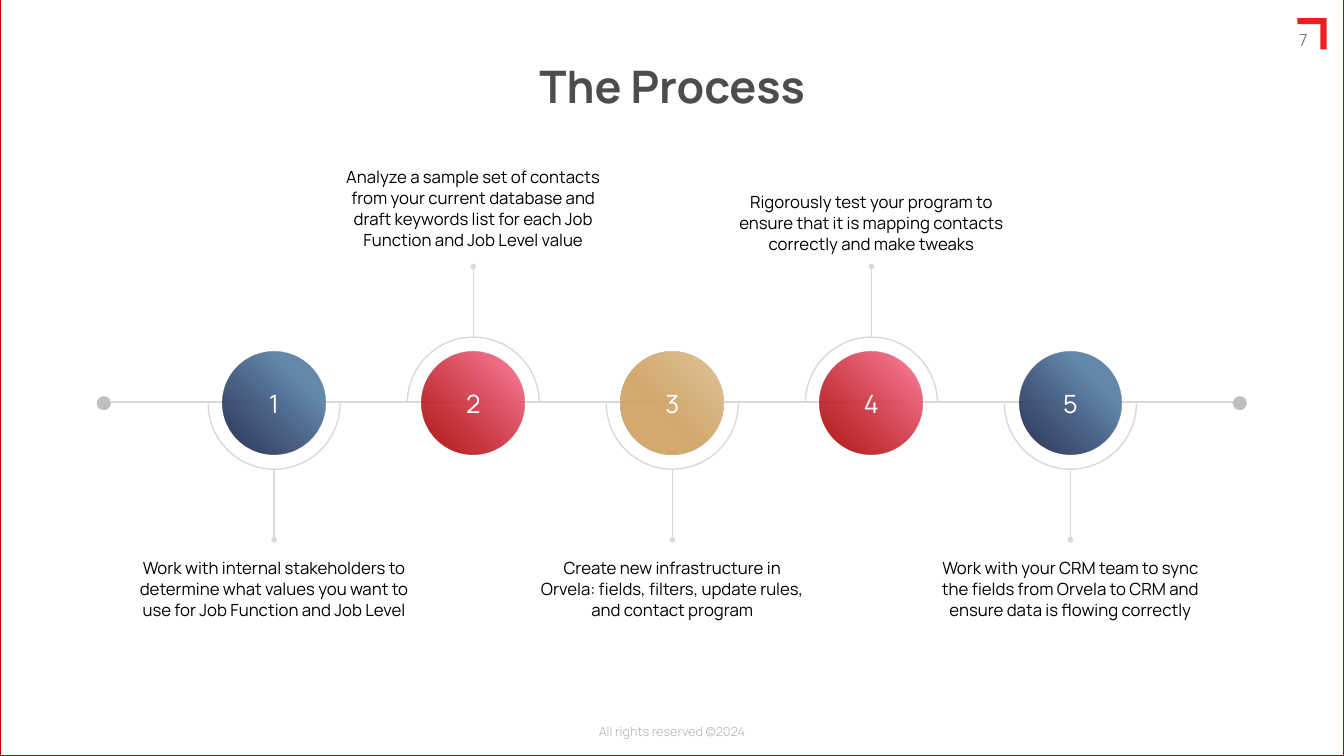
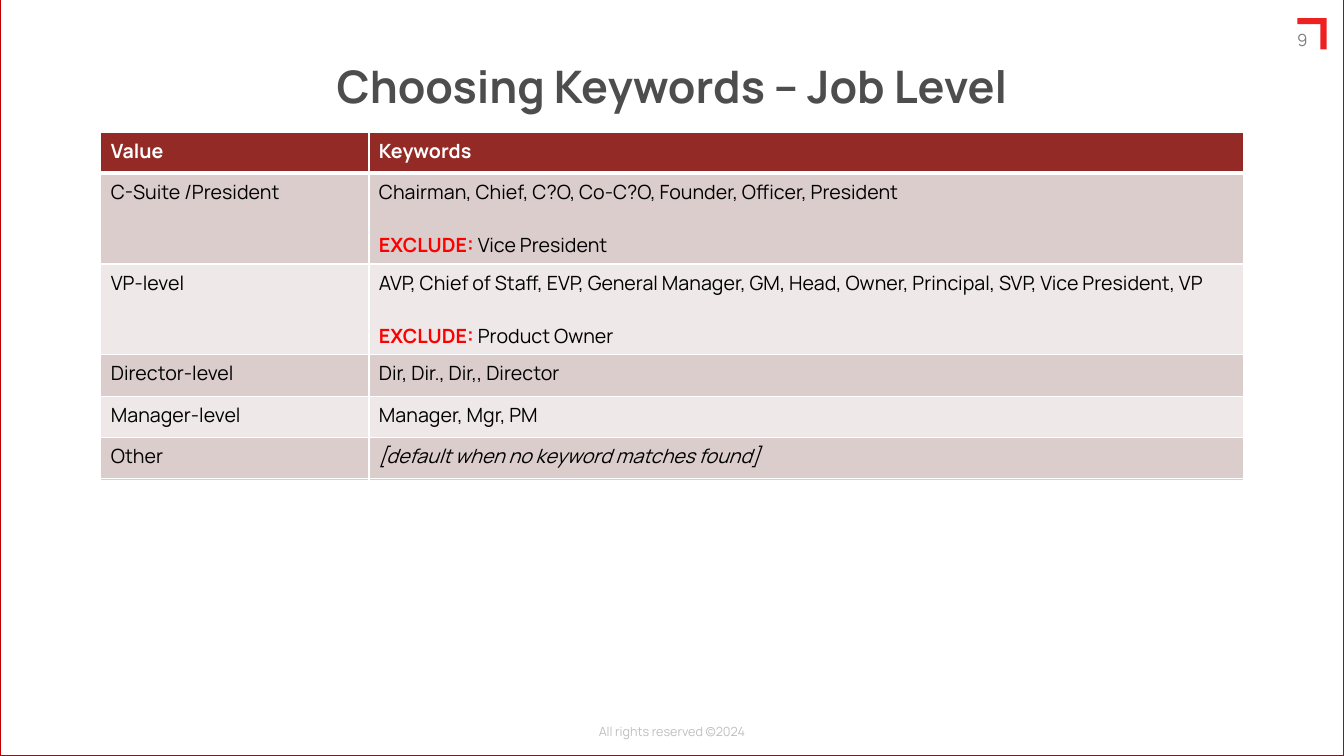
from dataclasses import dataclass
from typing import Any, NamedTuple

from lxml.etree import SubElement
from pptx import Presentation
from pptx.dml.color import RGBColor as RGB
from pptx.enum.shapes import MSO_CONNECTOR, MSO_SHAPE as SHAPE
from pptx.enum.text import MSO_ANCHOR as ANCHOR, PP_ALIGN as ALIGN
from pptx.oxml.ns import qn
from pptx.util import Inches, Pt

FONT = "Manrope"
WHITE = RGB(0xFF, 0xFF, 0xFF)
BLACK = RGB(0x00, 0x00, 0x00)
TITLE_GREY = RGB(0x4D, 0x4D, 0x4D)
NUMBER_GREY = RGB(0x80, 0x80, 0x80)
SOFT_GREY = RGB(0xBF, 0xBF, 0xBF)
LINE_GREY = RGB(0xD9, 0xD9, 0xD9)
CORNER_RED = RGB(0xED, 0x21, 0x22)
FRAME_RED = RGB(0xC0, 0x00, 0x00)
EXCLUDE_RED = RGB(0xFF, 0x00, 0x00)
HEADER_RED = RGB(0x93, 0x2A, 0x25)
ROW_FILLS = (RGB(0xDC, 0xCD, 0xCD), RGB(0xEE, 0xE8, 0xE8))

TITLE_FORMAT = {"size": Pt(32), "bold": True, "color": TITLE_GREY}
NUMBER_FORMAT = {"size": Pt(12), "color": NUMBER_GREY}
FOOTER_FORMAT = {"size": Pt(9), "color": SOFT_GREY}
STEP_FORMAT = {"size": Pt(18), "color": WHITE}
CAPTION_FORMAT = {"size": Pt(12), "color": BLACK}
HEADER_FORMAT = {"size": Pt(14), "bold": True, "color": WHITE}
CELL_FORMAT = {"size": Pt(14), "bold": False, "color": BLACK}
EXCLUDE_FORMAT = {"size": Pt(14), "bold": True, "color": EXCLUDE_RED}

SLIDE_WIDTH = 40 / 3
CORNER = ((12.87, 0.18), (13.16, 0.18), (13.16, 0.49),
          (13.1, 0.49), (13.1, 0.24), (12.87, 0.24))

AXIS_Y = 3.99
STEP_Y = 4
FIRST_STEP_X, LAST_STEP_X = 2.72, 10.62
AXIS_START, AXIS_END = 1.1, 12.23
END_DOT = 0.14
DISC = 1.02
ARC = 1.31
STEM = 0.7
CAPTION_WIDTH = 2.71


class Stop(NamedTuple):
    position: float
    color: RGB
    opacity: int


NAVY = (Stop(0.14, RGB(0x23, 0x2F, 0x57), 90), Stop(0.73, RGB(0x63, 0x89, 0xAD), 100))
CRIMSON = (Stop(0.11, RGB(0xAD, 0x00, 0x00), 86), Stop(0.99, RGB(0xFF, 0x83, 0xA4), 100))
SAND = (Stop(0.43, RGB(0xCF, 0xA1, 0x60), 90), Stop(1, RGB(0xE1, 0xC5, 0x9B), 100))


@dataclass(frozen=True)
class Step:
    caption: str
    gradient: tuple[Stop, Stop]
    caption_top: float
    caption_height: float = 0.62

    @property
    def points_up(self) -> bool:
        return self.caption_top < AXIS_Y


@dataclass(frozen=True)
class Level:
    name: str
    keywords: str
    excluded: str = ""
    italic: bool = False

    @property
    def row_height(self) -> float:
        return 0.9 if self.excluded else 0.41


STEPS = (
    Step("Work with internal stakeholders to determine what values you want to "
         "use for Job Function and Job Level", NAVY, 5.52),
    Step("Analyze a sample set of contacts from your current database and draft "
         "keywords list for each Job Function and Job Level value", CRIMSON, 1.65, 0.83),
    Step("Create new infrastructure in Orvela: fields, filters, update rules, "
         "and contact program", SAND, 5.52),
    Step("Rigorously test your program to ensure that it is mapping contacts "
         "correctly and make tweaks", CRIMSON, 1.89),
    Step("Work with your CRM team to sync the fields from Orvela to CRM and "
         "ensure data is flowing correctly", NAVY, 5.52),
)

LEVELS = (
    Level("C-Suite /President", "Chairman, Chief, C?O, Co-C?O, Founder, Officer, President",
          "Vice President"),
    Level("VP-level", "AVP, Chief of Staff, EVP, General Manager, GM, Head, Owner, "
          "Principal, SVP, Vice President, VP", "Product Owner"),
    Level("Director-level", "Dir, Dir., Dir,, Director"),
    Level("Manager-level", "Manager, Mgr, PM"),
    Level("Other", "[default when no keyword matches found]", italic=True),
)


def format_font(font, values: dict[str, Any]) -> None:
    font.name = FONT
    for name, value in values.items():
        if name == "color":
            font.color.rgb = value
        else:
            setattr(font, name, value)


def add_run(paragraph, text: str, values: dict[str, Any]) -> None:
    run = paragraph.add_run()
    run.text = text
    format_font(run.font, values)


def write(frame, text: str, values: dict[str, Any], align=ALIGN.CENTER, anchor=ANCHOR.TOP):
    """Fill a text frame with one paragraph and return that paragraph."""
    frame.word_wrap = True
    frame.vertical_anchor = anchor
    paragraph = frame.paragraphs[0]
    paragraph.alignment = align
    add_run(paragraph, text, values)
    return paragraph


def add_box(slide, left: float, top: float, width: float, height: float):
    box = slide.shapes.add_textbox(Inches(left), Inches(top), Inches(width), Inches(height))
    return box.text_frame


def add_plain_shape(slide, kind, left: float, top: float, width: float, height: float):
    """Add a preset shape with no shadow, fill or line."""
    shape = slide.shapes.add_shape(
        kind, Inches(left), Inches(top), Inches(width), Inches(height))
    shape.shadow.inherit = False
    shape.fill.background()
    shape.line.fill.background()
    return shape


def add_centred(slide, kind, x: float, y: float, size: float):
    return add_plain_shape(slide, kind, x - size / 2, y - size / 2, size, size)


def set_line(line, color: RGB, points: float) -> None:
    line.color.rgb = color
    line.width = Pt(points)


def add_line(slide, x1: float, y1: float, x2: float, y2: float, dot_at_end: bool = False) -> None:
    connector = slide.shapes.add_connector(
        MSO_CONNECTOR.STRAIGHT, Inches(x1), Inches(y1), Inches(x2), Inches(y2))
    set_line(connector.line, LINE_GREY, 1)
    properties = connector.element.spPr
    if dot_at_end:
        SubElement(properties.find(qn("a:ln")), qn("a:tailEnd"), type="oval", w="sm", len="sm")
    SubElement(properties, qn("a:effectLst"))


def fill_gradient(shape, stops: tuple[Stop, Stop]) -> None:
    shape.fill.gradient()
    shape.fill.gradient_angle = 45
    nodes = shape.element.spPr.iter(qn("a:gs"))
    for target, node, stop in zip(shape.fill.gradient_stops, nodes, stops):
        target.position = stop.position
        target.color.rgb = stop.color
        SubElement(node[0], qn("a:alpha"), val=str(stop.opacity * 1000))


def add_corner(slide) -> None:
    start, *others = [(Inches(x), Inches(y)) for x, y in CORNER]
    builder = slide.shapes.build_freeform(*start)
    builder.add_line_segments(others)
    corner = builder.convert_to_shape()
    corner.shadow.inherit = False
    corner.fill.solid()
    corner.fill.fore_color.rgb = CORNER_RED
    corner.line.fill.background()


def add_titled_slide(deck, title: str, number: int):
    """Add a slide with the shared frame, corner, page number, footer and title."""
    slide = deck.slides.add_slide(deck.slide_layouts[5])
    add_corner(slide)
    write(add_box(slide, 12.48, 0.25, 0.59, 0.28), str(number), NUMBER_FORMAT,
          ALIGN.RIGHT, ANCHOR.MIDDLE)
    frame = add_plain_shape(slide, SHAPE.RECTANGLE, 0, -0.03, SLIDE_WIDTH, 7.53)
    set_line(frame.line, FRAME_RED, 1.5)
    write(add_box(slide, 5.37, 7.13, 2.59, 0.25), "All rights reserved ©2024", FOOTER_FORMAT)

    heading = slide.shapes.title
    heading.left, heading.top = Inches(1), Inches(0.6)
    heading.width, heading.height = Inches(11.34), Inches(0.51)
    heading.text_frame.margin_top = Inches(0.11)
    write(heading.text_frame, title, TITLE_FORMAT, anchor=ANCHOR.MIDDLE).line_spacing = 0.9
    return slide


def add_step(slide, number: int, step: Step, x: float) -> None:
    disc = add_centred(slide, SHAPE.OVAL, x, STEP_Y, DISC)
    fill_gradient(disc, step.gradient)
    write(disc.text_frame, str(number), STEP_FORMAT, anchor=ANCHOR.MIDDLE)

    arc = add_centred(slide, SHAPE.ARC, x, STEP_Y, ARC)
    set_line(arc.line, LINE_GREY, 1)
    half_turn = 108
    start = half_turn if step.points_up else 0
    arc.adjustments[0] = start + 0.1
    arc.adjustments[1] = start + half_turn - 0.2

    direction = -1 if step.points_up else 1
    stem_start = STEP_Y + direction * ARC / 2
    add_line(slide, x, stem_start, x, stem_start + direction * STEM, dot_at_end=True)

    caption = add_box(slide, x - CAPTION_WIDTH / 2, step.caption_top,
                      CAPTION_WIDTH, step.caption_height)
    for side in ("left", "top", "right", "bottom"):
        setattr(caption, f"margin_{side}", 0)
    write(caption, step.caption, CAPTION_FORMAT).line_spacing = Pt(15)


def add_process_slide(deck) -> None:
    slide = add_titled_slide(deck, "The Process", 7)
    add_line(slide, AXIS_START, AXIS_Y, AXIS_END, AXIS_Y)
    for x in (AXIS_START - END_DOT / 2, AXIS_END + END_DOT / 2):
        end_dot = add_centred(slide, SHAPE.OVAL, x, STEP_Y, END_DOT)
        end_dot.fill.solid()
        end_dot.fill.fore_color.rgb = SOFT_GREY
    pitch = (LAST_STEP_X - FIRST_STEP_X) / (len(STEPS) - 1)
    for index, step in enumerate(STEPS):
        add_step(slide, index + 1, step, FIRST_STEP_X + index * pitch)


def style_cell(cell, row: int) -> None:
    """Give a cell its white borders, thicker below the header, and its row fill."""
    properties = cell._tc.get_or_add_tcPr()
    for side in "LRTB":
        thick = (row, side) in ((0, "B"), (1, "T"))
        border = SubElement(properties, qn(f"a:ln{side}"), w=str(Pt(3 if thick else 1)))
        SubElement(SubElement(border, qn("a:solidFill")), qn("a:srgbClr"), val=str(WHITE))
    cell.fill.solid()
    cell.fill.fore_color.rgb = ROW_FILLS[(row - 1) % 2] if row else HEADER_RED


def write_keywords(frame, level: Level) -> None:
    write(frame, level.keywords, CELL_FORMAT | {"italic": level.italic}, ALIGN.LEFT)
    if level.excluded:
        exclusion = frame.add_paragraph()
        exclusion.space_before = Pt(19)
        add_run(exclusion, "EXCLUDE: ", EXCLUDE_FORMAT)
        add_run(exclusion, level.excluded, CELL_FORMAT)


def add_levels_table(slide, with_keywords: bool, extra_depth: float = 0) -> None:
    """Add the table of levels; extra_depth makes its last row taller."""
    heights = [0.41, *(level.row_height for level in LEVELS)]
    heights[-1] += extra_depth
    table = slide.shapes.add_table(len(heights), 2, Inches(1), Inches(1.31),
                                   Inches(11.34), Inches(sum(heights))).table
    for column, width in zip(table.columns, (2.66, 8.68)):
        column.width = Inches(width)
    for index, height in enumerate(heights):
        table.rows[index].height = Inches(height)
        for cell in table.rows[index].cells:
            style_cell(cell, index)

    for column, heading in enumerate(("Value", "Keywords")):
        write(table.cell(0, column).text_frame, heading, HEADER_FORMAT, ALIGN.LEFT)
    for row, level in enumerate(LEVELS, start=1):
        write(table.cell(row, 0).text_frame, level.name, CELL_FORMAT, ALIGN.LEFT)
        if with_keywords:
            write_keywords(table.cell(row, 1).text_frame, level)


def add_keywords_slide(deck) -> None:
    """Add the two stacked tables; the rear one shows as an edge below the front one."""
    slide = add_titled_slide(deck, "Choosing Keywords – Job Level", 9)
    add_levels_table(slide, with_keywords=False, extra_depth=0.02)
    add_levels_table(slide, with_keywords=True)


def main() -> None:
    deck = Presentation()
    deck.slide_width, deck.slide_height = Inches(SLIDE_WIDTH), Inches(7.5)
    add_process_slide(deck)
    add_keywords_slide(deck)
    deck.save("out.pptx")


if __name__ == "__main__":
    main()
